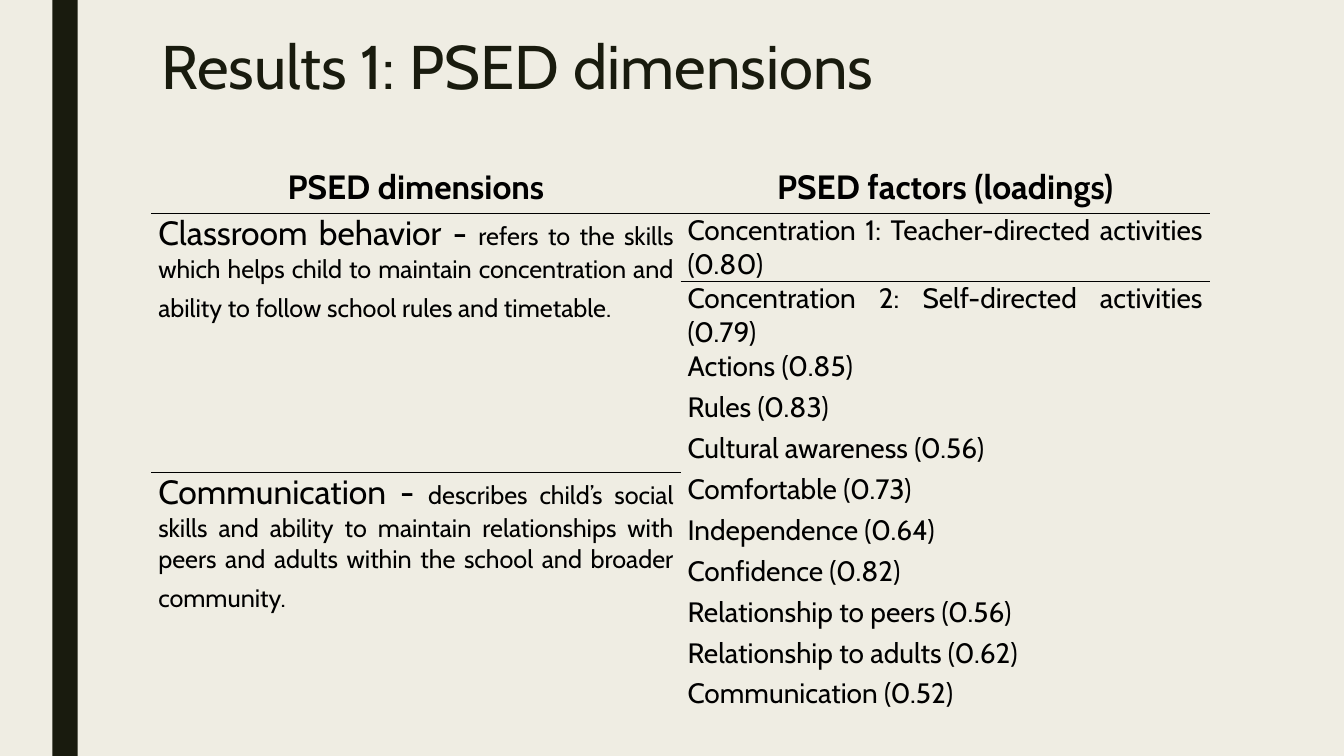
import pptx
import pptx.dml.color
import pptx.enum.shapes
import pptx.enum.text
import pptx.util
import lxml.etree

Inches, Pt = pptx.util.Inches, pptx.util.Pt
ALIGN = pptx.enum.text.PP_ALIGN
ANCHOR = pptx.enum.text.MSO_ANCHOR
FONT = "Cabin"
INK, BLACK, CREAM = "191B0E", "000000", "EFEDE3"
NO_STYLE = "{2D5ABB26-0587-4C30-8999-92F81FD0307C}"
DRAWING = "{http://schemas.openxmlformats.org/drawingml/2006/main}"

HEADERS = ["PSED dimensions", "PSED factors (loadings)"]
# Each dimension: name, description, factors
DIMENSIONS = [
    ("Classroom behavior - ",
     "refers to the skills which helps child to maintain concentration and "
     "ability to follow school rules and timetable.",
     ["Concentration 1: Teacher-directed activities (0.80)",
      "Concentration 2: Self-directed activities (0.79)",
      "Actions (0.85)", "Rules (0.83)", "Cultural awareness (0.56)"]),
    ("Communication - ",
     "describes child’s social skills and ability to maintain relationships "
     "with peers and adults within the school and broader community.",
     ["Comfortable (0.73)", "Independence (0.64)", "Confidence (0.82)",
      "Relationship to peers (0.56)", "Relationship to adults (0.62)",
      "Communication (0.52)"]),
]


def color(value):
    return pptx.dml.color.RGBColor.from_string(value)


def write_cell(cell, spans, align, bold=False, rule=None):
    """Fill a cell with (text, size) spans; rule is "lnT", "lnB" or None."""
    cell.fill.background()
    para = cell.text_frame.paragraphs[0]
    para.alignment = align
    if not bold:
        cell.margin_left = cell.margin_right = Inches(0.07)
        cell.margin_top = cell.margin_bottom = 0
        para.space_before = Pt(6)
    for text, size in spans:
        span = para.add_run()
        span.text = text
        span.font.name, span.font.size, span.font.bold = FONT, Pt(size), bold
        span.font.color.rgb = color(BLACK)
    if rule:
        line = lxml.etree.Element(DRAWING + rule, w=str(Pt(1)))
        fill = lxml.etree.SubElement(line, DRAWING + "solidFill")
        lxml.etree.SubElement(fill, DRAWING + "srgbClr", val=BLACK)
        cell._tc.get_or_add_tcPr().insert(0, line)


# Page and background
deck = pptx.Presentation()
deck.slide_width, deck.slide_height = Inches(13.33), Inches(7.5)
page = deck.slides.add_slide(deck.slide_layouts[5])
page.background.fill.solid()
page.background.fill.fore_color.rgb = color(CREAM)

# Side bar
bar = page.shapes.add_shape(pptx.enum.shapes.MSO_SHAPE.RECTANGLE,
                            Inches(0.52), 0, Inches(0.25), Inches(7.5))
bar.shadow.inherit = False
bar.fill.solid()
bar.fill.fore_color.rgb = color(INK)
bar.line.fill.background()

# Title
title = page.shapes.title
title.left, title.top = Inches(1.5), Inches(0.32)
title.width, title.height = Inches(10.5), Inches(0.86)
title.text_frame.text = "Results 1: PSED dimensions"
title.text_frame.vertical_anchor = ANCHOR.TOP
para = title.text_frame.paragraphs[0]
para.alignment, para.line_spacing = ALIGN.LEFT, 0.89
font = para.runs[0].font
font.name, font.size, font.color.rgb = FONT, Pt(44), color(INK)

# Table without style
row_count = 1 + sum(len(factors) for _, _, factors in DIMENSIONS)
frame = page.shapes.add_table(row_count, 2, Inches(1.5), Inches(1.61),
                              Inches(10.5), Inches(4.87))
table = frame.table
table.first_row = table.horz_banding = False
table._tbl.tblPr.find(DRAWING + "tableStyleId").text = NO_STYLE

# Header row
for column, header in enumerate(HEADERS):
    write_cell(table.cell(0, column), [(header, 24)], ALIGN.CENTER,
               bold=True, rule="lnB")

# One merged cell per dimension, with its factors beside it
row = 1
for name, description, factors in DIMENSIONS:
    dimension = table.cell(row, 0)
    dimension.merge(table.cell(row + len(factors) - 1, 0))
    write_cell(dimension, [(name, 24), (description, 18), (" ", 24)],
               ALIGN.JUSTIFY, rule="lnT")
    for factor in factors:
        write_cell(table.cell(row, 1), [(factor, 20)], ALIGN.JUSTIFY,
                   rule="lnB" if row == 1 else None)
        row += 1

deck.save("out.pptx")
